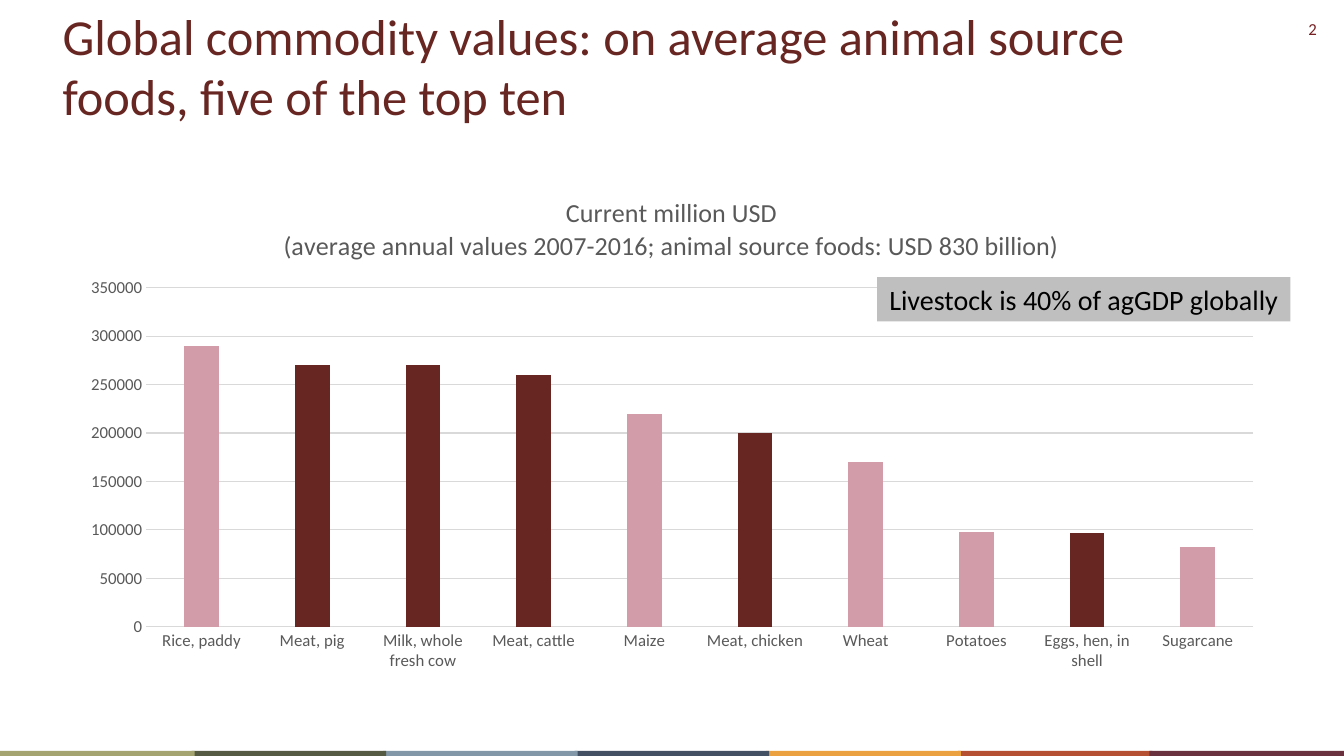
from pptx import Presentation
from pptx.chart import data as chart_data
from pptx.dml.color import RGBColor
from pptx.enum import chart as ch, shapes, text
from pptx.oxml import parse_xml
from pptx.oxml.ns import nsdecls, qn
from pptx.util import Inches, Pt

STRIPES = ["A4A470", "555A42", "8298A9", "434F63", "ECA141", "B65033", "69303D"]
STACKING = [5, 6, 4, 3, 2, 1, 0]
ANIMAL, CROP = "682622", "D29DA9"
COMMODITIES = [
    ("Rice, paddy", 290000, CROP),
    ("Meat, pig", 270000, ANIMAL),
    ("Milk, whole fresh cow", 270000, ANIMAL),
    ("Meat, cattle", 260000, ANIMAL),
    ("Maize", 220000, CROP),
    ("Meat, chicken", 200000, ANIMAL),
    ("Wheat", 170000, CROP),
    ("Potatoes", 98000, CROP),
    ("Eggs, hen, in shell", 97000, ANIMAL),
    ("Sugarcane", 82000, CROP),
]


def color(hex_string):
    return RGBColor.from_string(hex_string)


def add_run(paragraph, words, size, hex_string):
    run = paragraph.add_run()
    run.text = words
    run.font.name = "Calibri"
    run.font.size = Pt(size)
    run.font.bold = False
    run.font.color.rgb = color(hex_string)


presentation = Presentation()
presentation.slide_width = Inches(13.33)
presentation.slide_height = Inches(7.5)
slide = presentation.slides.add_slide(presentation.slide_layouts[5])

# Title and slide number
title = slide.shapes.title
title.left, title.top = Inches(0.52), Inches(0)
title.width, title.height = Inches(12), Inches(0.74)
title.text_frame.word_wrap = True
title.text_frame.auto_size = text.MSO_AUTO_SIZE.NONE
title.text_frame.vertical_anchor = text.MSO_ANCHOR.TOP
title.text_frame.paragraphs[0].alignment = text.PP_ALIGN.LEFT
add_run(title.text_frame.paragraphs[0],
        "Global commodity values: on average animal source foods, five of the top ten",
        36, ANIMAL)

number = slide.shapes.add_textbox(Inches(12.46), Inches(0.14), Inches(0.7), Inches(0.3))
number.text_frame.word_wrap = True
number.text_frame.paragraphs[0].alignment = text.PP_ALIGN.RIGHT
add_run(number.text_frame.paragraphs[0], "2", 12, "762123")

# Coloured stripes along the bottom edge, slightly overlapping
for index in STACKING:
    stripe = slide.shapes.add_shape(
        shapes.MSO_SHAPE.RECTANGLE,
        Inches(1.9 * index), Inches(7.45), Inches(1.93), Inches(0.06))
    stripe.shadow.inherit = False
    stripe.fill.solid()
    stripe.fill.fore_color.rgb = color(STRIPES[index])
    stripe.line.fill.background()

# Commodity chart
values = chart_data.CategoryChartData()
values.categories = [name for name, _, _ in COMMODITIES]
values.add_series("Series 1", [value for _, value, _ in COMMODITIES])
chart = slide.shapes.add_chart(
    ch.XL_CHART_TYPE.COLUMN_CLUSTERED,
    Inches(0.67), Inches(1.75), Inches(12), Inches(5), values).chart
chart.font.name = "Calibri"
chart.font.size = Pt(10)
chart.font.color.rgb = color("000000")
chart.has_legend = False

heading = chart.chart_title.text_frame
add_run(heading.paragraphs[0], "Current million USD", 18.6, "595959")
add_run(heading.add_paragraph(),
        "(average annual values 2007-2016; animal source foods: USD 830 billion)",
        18.6, "595959")
chart.chart_title.include_in_layout = False

plot = chart.plots[0]
plot.gap_width = 219
plot.overlap = -27
plot.vary_by_categories = False
series = plot.series[0]
series.format.fill.solid()
series.format.fill.fore_color.rgb = color("69303D")
for index, (_, _, fill) in enumerate(COMMODITIES):
    column = series.points[index].format
    column.fill.solid()
    column.fill.fore_color.rgb = color(fill)

for axis in (chart.category_axis, chart.value_axis):
    axis.major_tick_mark = ch.XL_TICK_MARK.NONE
    axis.minor_tick_mark = ch.XL_TICK_MARK.NONE
    axis.tick_labels.font.name = "Calibri"
    axis.tick_labels.font.size = Pt(12)
    axis.tick_labels.font.color.rgb = color("595959")
chart.value_axis.minimum_scale = 0
chart.value_axis.maximum_scale = 350000
chart.value_axis.major_unit = 50000
chart.value_axis.format.line.fill.background()
for line in (chart.category_axis.format.line,
             chart.value_axis.major_gridlines.format.line):
    line.color.rgb = color("D9D9D9")
    line.width = Pt(0.75)

# Fixed places for the chart title and the plot area, as shares of the chart
title_element = chart.chart_title._element
plot_area = plot._element.getparent()
for parent, target, place in (
        (title_element, "", {"x": 0.176, "y": 0.032}),
        (plot_area, '<c:layoutTarget val="inner"/>',
         {"x": 0.065, "y": 0.221, "w": 0.915, "h": 0.673})):
    for old in parent.findall(qn("c:layout")):
        parent.remove(old)
    modes = "".join(f'<c:{side}Mode val="edge"/>' for side in "xy")
    shares = "".join(f'<c:{side} val="{share}"/>' for side, share in place.items())
    layout = parse_xml(f'<c:layout {nsdecls("c")}><c:manualLayout>{target}{modes}{shares}'
                       '</c:manualLayout></c:layout>')
    parent.insert(1 if parent is title_element else 0, layout)

# Callout
callout = slide.shapes.add_shape(
    shapes.MSO_SHAPE.RECTANGLE, Inches(8.7), Inches(2.75), Inches(4.1), Inches(0.44))
callout.shadow.inherit = False
callout.fill.solid()
callout.fill.fore_color.rgb = color("BFBFBF")
callout.line.fill.background()
callout.text_frame.word_wrap = False
callout.text_frame.paragraphs[0].alignment = text.PP_ALIGN.CENTER
add_run(callout.text_frame.paragraphs[0], "Livestock is 40% of agGDP globally", 20, "000000")

presentation.save("out.pptx")
